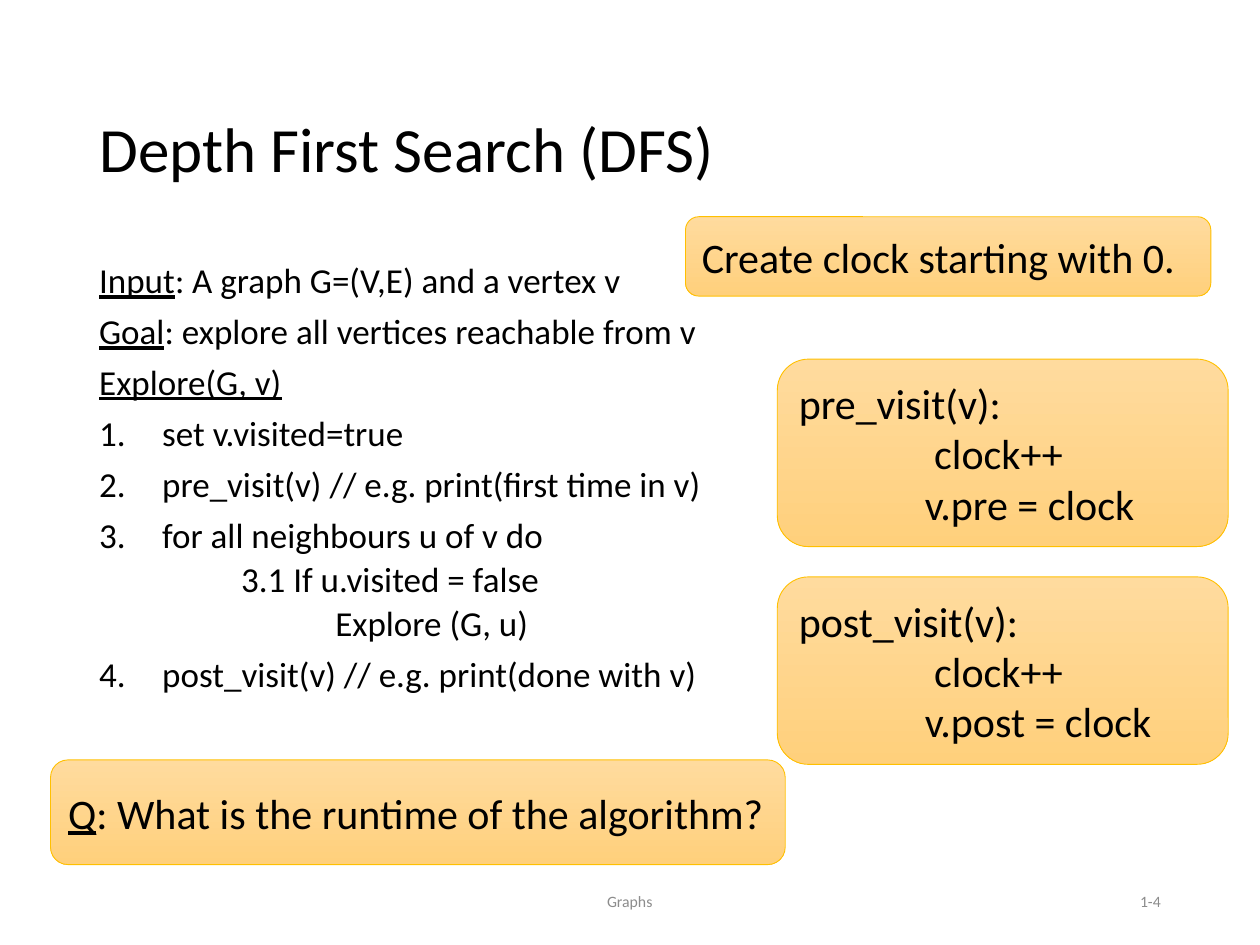
from dataclasses import dataclass

from lxml.etree import SubElement
from pptx import Presentation
from pptx.dml.color import RGBColor
from pptx.enum.shapes import MSO_SHAPE
from pptx.enum.text import MSO_ANCHOR, MSO_AUTO_SIZE, PP_ALIGN
from pptx.oxml.ns import qn
from pptx.util import Cm, Pt


@dataclass(frozen=True)
class Theme:
    font: str = "Calibri"
    text: RGBColor = RGBColor(0, 0, 0)
    muted: RGBColor = RGBColor(0x8C, 0x8C, 0x8C)
    box_top: RGBColor = RGBColor(0xFF, 0xDB, 0x9E)
    box_bottom: RGBColor = RGBColor(0xFF, 0xD0, 0x7C)
    box_line: RGBColor = RGBColor(0xFF, 0xC0, 0x00)
    title_size: Pt = Pt(36)
    box_size: Pt = Pt(24)
    body_size: Pt = Pt(20)
    footer_size: Pt = Pt(9)


THEME = Theme()
NUMBER_INDENT = Cm(1.27)
CODE_INDENT = Cm(2.54)


def add_paragraph(tf, first, size, lead="", text="", color=THEME.text):
    """Write an underlined lead followed by plain text."""
    p = tf.paragraphs[0] if first else tf.add_paragraph()
    p.alignment = PP_ALIGN.LEFT
    for content, underlined in ((lead, True), (text, False)):
        if content:
            r = p.add_run()
            r.text = content
            r.font.name = THEME.font
            r.font.size = size
            r.font.color.rgb = color
            r.font.underline = underlined
    return p


def indent(p, left, hanging=0):
    pPr = p._p.get_or_add_pPr()
    pPr.set("marL", str(int(left)))
    pPr.set("indent", str(-int(hanging)))
    return pPr


def set_title(s, text):
    sp = s.shapes.title
    sp.left, sp.top, sp.width, sp.height = Cm(1.75), Cm(1.02), Cm(21.91), Cm(3.68)
    tf = sp.text_frame
    tf.auto_size = MSO_AUTO_SIZE.NONE
    tf.vertical_anchor = MSO_ANCHOR.MIDDLE
    p = add_paragraph(tf, True, THEME.title_size, text=text)
    p.line_spacing = 1.15
    p.space_before = Pt(6)


def add_text_frame(s, left, top, width, height):
    tf = s.shapes.add_textbox(left, top, width, height).text_frame
    tf.word_wrap = True
    return tf


def add_footer(s, left, width, text, alignment):
    tf = add_text_frame(s, left, Cm(17.65), width, Cm(1.02))
    tf.vertical_anchor = MSO_ANCHOR.MIDDLE
    p = add_paragraph(tf, True, THEME.footer_size, text=text, color=THEME.muted)
    p.alignment = alignment


def add_algorithm(s):
    lines = [
        ("heading", "Input", ": A graph G=(V,E) and a vertex v"),
        ("heading", "Goal", ": explore all vertices reachable from v"),
        ("heading", "Explore(G, v)", ""),
        ("step", "", "set v.visited=true"),
        ("step", "", "pre_visit(v) // e.g. print(first time in v)"),
        ("step", "", "for all neighbours u of v do"),
        ("substep", "", "3.1 If u.visited = false"),
        ("call", "", "Explore (G, u)"),
        ("step", "", "post_visit(v) // e.g. print(done with v)"),
    ]
    nested_indents = {"substep": Cm(2.86), "call": Cm(4.76)}
    tf = add_text_frame(s, Cm(1.75), Cm(5.18), Cm(21.91), Cm(12.09))
    for i, (kind, lead, text) in enumerate(lines):
        p = add_paragraph(tf, i == 0, THEME.body_size, lead, text)
        p.line_spacing = 0.9
        p.space_before = Pt(7.5)
        if kind == "step":
            pPr = indent(p, NUMBER_INDENT, NUMBER_INDENT)
            SubElement(pPr, qn("a:buFont"), typeface="+mj-lt")
            SubElement(pPr, qn("a:buAutoNum"), type="arabicPeriod")
        elif kind in nested_indents:
            p.level = 1
            p.space_before = Pt(3.8)
            indent(p, nested_indents[kind])


def add_box(s, left, top, width, height, lines):
    """Add a rounded box; each line is (lead, text, left indent)."""
    sp = s.shapes.add_shape(MSO_SHAPE.ROUNDED_RECTANGLE, left, top, width, height)
    sp.shadow.inherit = False
    sp.fill.gradient()
    sp.fill.gradient_angle = 270
    for stop, position, color in zip(
        sp.fill.gradient_stops, (0, 1), (THEME.box_top, THEME.box_bottom)
    ):
        stop.position = position
        stop.color.rgb = color
    sp.line.color.rgb = THEME.box_line
    sp.line.width = Pt(0.5)
    tf = sp.text_frame
    tf.word_wrap = True
    tf.vertical_anchor = MSO_ANCHOR.MIDDLE
    for i, (lead, text, left_indent) in enumerate(lines):
        indent(add_paragraph(tf, i == 0, THEME.box_size, lead, text), left_indent)


def add_visit_box(s, top, name):
    lines = [
        ("", f"{name}_visit(v):", 0),
        ("", "clock++", CODE_INDENT + Cm(0.19)),
        ("", f"v.{name} = clock", CODE_INDENT),
    ]
    add_box(s, Cm(15.67), top, Cm(9.09), Cm(3.78), lines)


def main():
    prs = Presentation()
    prs.slide_width, prs.slide_height = Cm(25.4), Cm(19.05)
    s = prs.slides.add_slide(prs.slide_layouts[5])
    set_title(s, "Depth First Search (DFS)")
    add_footer(s, Cm(8.41), Cm(8.57), "Graphs", PP_ALIGN.CENTER)
    add_footer(s, Cm(17.93), Cm(5.72), "1-4", PP_ALIGN.RIGHT)
    add_algorithm(s)
    add_box(s, Cm(13.82), Cm(4.37), Cm(10.59), Cm(1.6),
            [("", "Create clock starting with 0.", 0)])
    add_visit_box(s, Cm(7.24), "pre")
    add_visit_box(s, Cm(11.63), "post")
    add_box(s, Cm(1.02), Cm(15.32), Cm(14.81), Cm(2.11),
            [("Q", ": What is the runtime of the algorithm?", 0)])
    prs.save("out.pptx")


if __name__ == "__main__":
    main()
